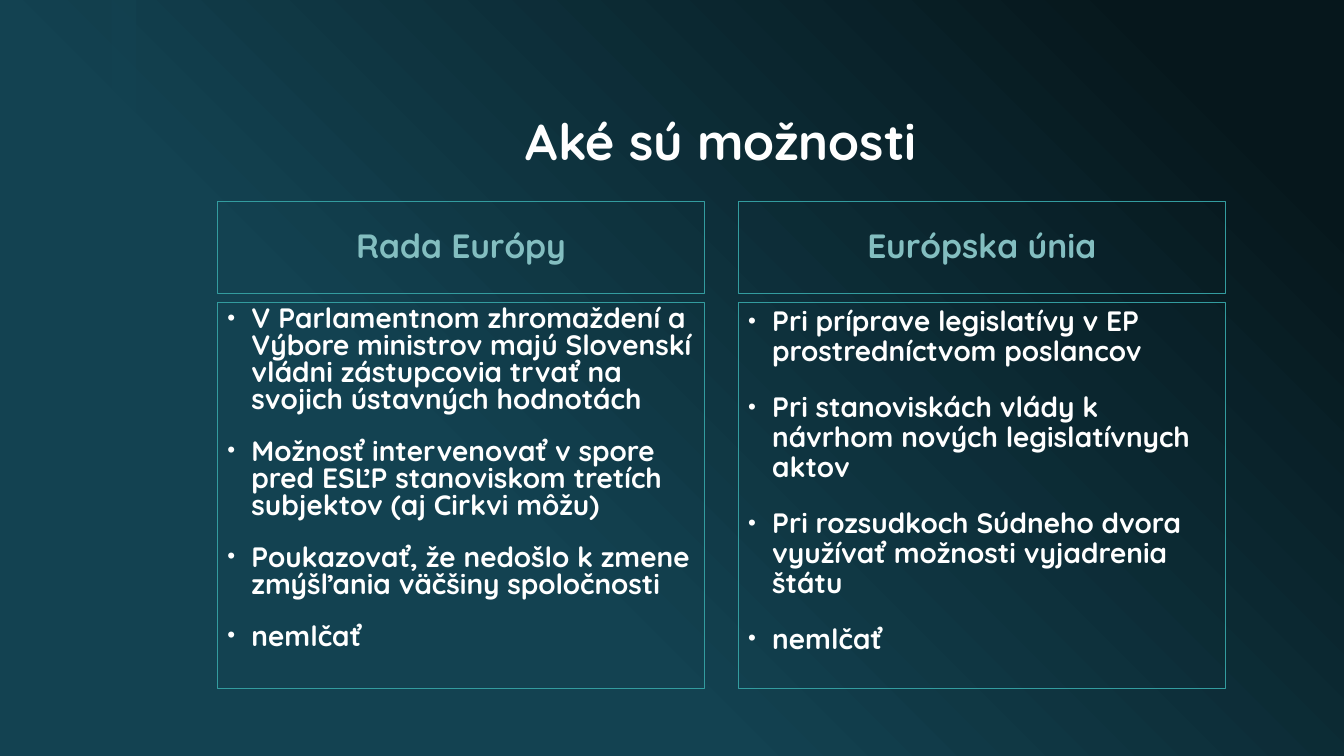
from dataclasses import dataclass

from lxml import etree
from pptx import Presentation
from pptx.dml.color import RGBColor
from pptx.enum.shapes import MSO_SHAPE
from pptx.enum.text import MSO_ANCHOR, PP_ALIGN
from pptx.oxml.ns import qn
from pptx.util import Pt

PX = 9525  # EMU in one px
SLIDE_W, SLIDE_H = 1280, 720


@dataclass(frozen=True)
class Theme:
    font: str = "Quicksand"
    dark: RGBColor = RGBColor(0x06, 0x17, 0x1C)
    teal: RGBColor = RGBColor(0x13, 0x42, 0x51)
    border: RGBColor = RGBColor(0x33, 0x9C, 0x9F)
    heading: RGBColor = RGBColor(0x83, 0xBE, 0xC0)
    text: RGBColor = RGBColor(0xFF, 0xFF, 0xFF)
    title_size: int = 36
    heading_size: int = 24
    body_size: int = 20
    border_width: float = 0.75


THEME = Theme()

COLUMNS = [
    ("Rada Európy", 0.8, [
        "V Parlamentnom zhromaždení a Výbore ministrov majú Slovenskí vládni "
        "zástupcovia trvať na svojich ústavných hodnotách",
        "Možnosť intervenovať v spore pred ESĽP stanoviskom tretích subjektov "
        "(aj Cirkvi môžu)",
        "Poukazovať, že nedošlo k zmene zmýšľania väčšiny spoločnosti",
        "nemlčať",
    ]),
    ("Európska únia", 0.9, [
        "Pri príprave legislatívy v EP prostredníctvom poslancov",
        "Pri stanoviskách vlády k návrhom nových legislatívnych aktov",
        "Pri rozsudkoch Súdneho dvora využívať možnosti vyjadrenia štátu",
        "nemlčať",
    ]),
]


def emu(*lengths):
    return [n * PX for n in lengths]


def add_run(p, text, size, color):
    r = p.add_run()
    r.text = text
    r.font.name = THEME.font
    r.font.size = Pt(size)
    r.font.bold = True
    r.font.color.rgb = color


def add_bullet(p):
    pPr = p._p.get_or_add_pPr()
    pPr.set("marL", str(23 * PX))
    pPr.set("indent", str(-23 * PX))
    etree.SubElement(pPr, qn("a:buSzPct"), val="80000")
    etree.SubElement(pPr, qn("a:buFont"), typeface="Arial")
    etree.SubElement(pPr, qn("a:buChar"), char="•")


def add_panel(slide, x, y, w, h, anchor):
    """Outlined rectangle; returns its text frame."""
    sp = slide.shapes.add_shape(MSO_SHAPE.RECTANGLE, *emu(x, y, w, h))
    sp.shadow.inherit = False
    sp.fill.background()
    sp.line.color.rgb = THEME.border
    sp.line.width = Pt(THEME.border_width)
    tf = sp.text_frame
    tf.word_wrap = True
    tf.vertical_anchor = anchor
    return tf


def add_centred_line(tf, text, size, color):
    p = tf.paragraphs[0]
    p.alignment = PP_ALIGN.CENTER
    p.line_spacing = 0.9
    add_run(p, text, size, color)


def add_backdrop(slide):
    # Diagonal gradient, dark in the top right corner
    fill = slide.background.fill
    fill.gradient()
    fill.gradient_angle = 225
    stops = [(0.1, THEME.dark), (0.65, THEME.teal)]
    for stop, (position, color) in zip(fill.gradient_stops, stops):
        stop.position = position
        stop.color.rgb = color

    # Translucent vertical band
    band = slide.shapes.add_shape(MSO_SHAPE.RECTANGLE, *emu(106, 0, 24, SLIDE_H))
    band.shadow.inherit = False
    band.line.fill.background()
    band.fill.solid()
    band.fill.fore_color.rgb = THEME.teal
    color = band._element.spPr.find(qn("a:solidFill"))[0]
    etree.SubElement(color, qn("a:alpha"), val="60000")


def add_title(slide, x, y, w, h, text):
    tf = slide.shapes.add_textbox(*emu(x, y, w, h)).text_frame
    tf.word_wrap = True
    tf.vertical_anchor = MSO_ANCHOR.BOTTOM
    add_centred_line(tf, text, THEME.title_size, THEME.text)


def add_column(slide, x, y, w, h, heading, spacing, items):
    heading_h, gap = 88, 8

    # Heading panel
    tf = add_panel(slide, x, y, w, heading_h, MSO_ANCHOR.MIDDLE)
    add_centred_line(tf, heading, THEME.heading_size, THEME.heading)

    # Bullet panel
    top = heading_h + gap
    tf = add_panel(slide, x, y + top, w, h - top, MSO_ANCHOR.TOP)
    for i, item in enumerate(items):
        p = tf.add_paragraph() if i else tf.paragraphs[0]
        add_bullet(p)
        p.alignment = PP_ALIGN.LEFT
        p.line_spacing = spacing
        if i:
            p.space_before = Pt(18)
        add_run(p, item, THEME.body_size, THEME.text)


def main():
    prs = Presentation()
    prs.slide_width, prs.slide_height = emu(SLIDE_W, SLIDE_H)
    slide = prs.slides.add_slide(prs.slide_layouts[6])

    left, width, column_w = 207, 960, 464
    add_backdrop(slide)
    add_title(slide, left, 40, width, 128, "Aké sú možnosti")
    step = (width - column_w) // (len(COLUMNS) - 1)
    for i, column in enumerate(COLUMNS):
        add_column(slide, left + i * step, 192, column_w, 464, *column)

    prs.save("out.pptx")


if __name__ == "__main__":
    main()
